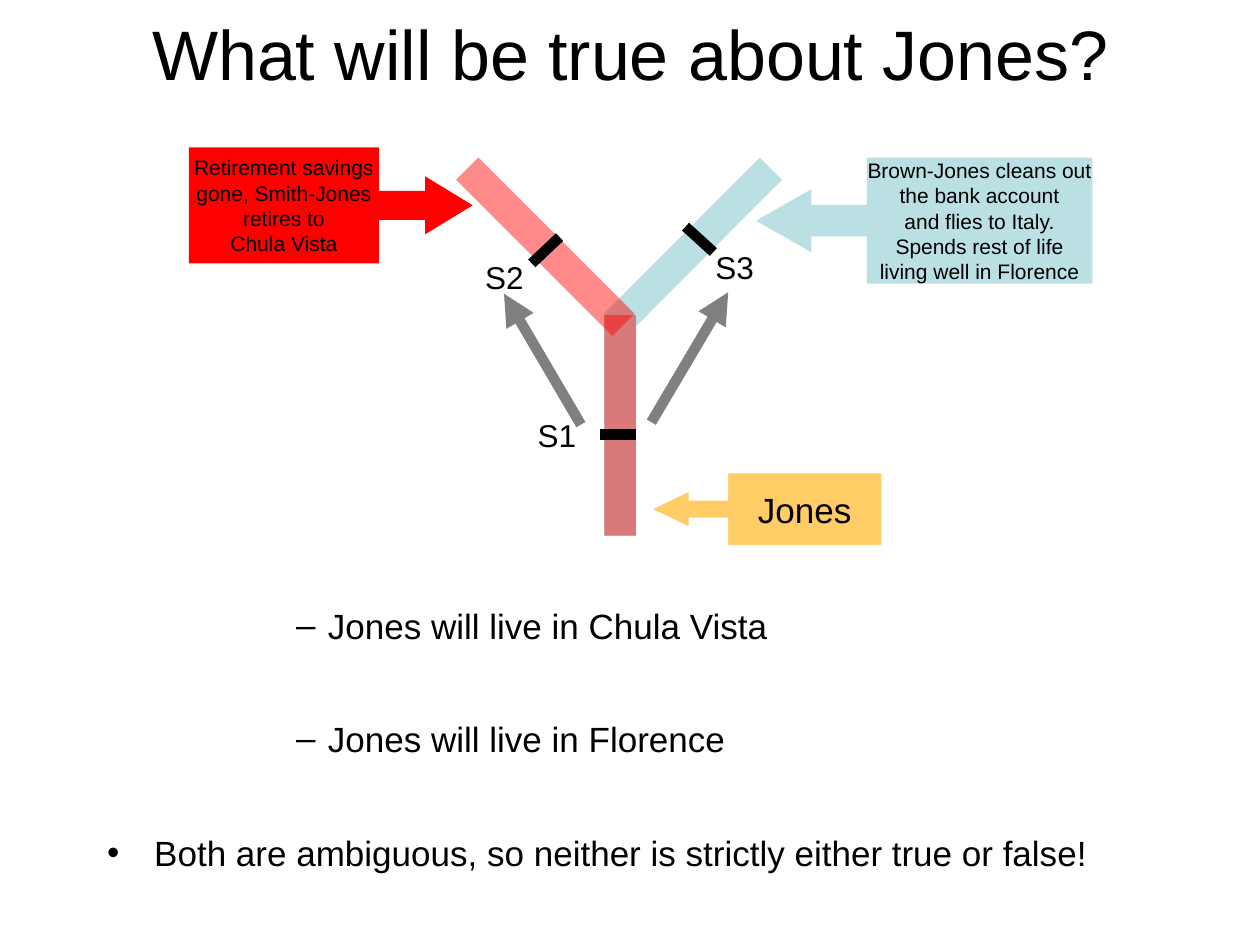
from typing import NamedTuple

from lxml.etree import SubElement
from pptx import Presentation
from pptx.dml.color import RGBColor
from pptx.enum.shapes import MSO_CONNECTOR, MSO_SHAPE
from pptx.enum.text import MSO_ANCHOR, MSO_AUTO_SIZE, PP_ALIGN
from pptx.oxml.ns import qn
from pptx.util import Cm, Pt

BLACK, RED, TEAL, GREY = "000000", "FF0000", "BBE0E3", "808080"


class Stroke(NamedTuple):
    start: tuple[float, float]
    end: tuple[float, float]
    color: str
    width: float = 6
    opacity: int = 100
    arrow: bool = False


class Label(NamedTuple):
    text: str
    left: float
    top: float


class Callout(NamedTuple):
    text: str
    box: tuple[float, float, float, float]
    preset: MSO_SHAPE
    adjustments: tuple[float, ...]
    fill: str
    size: int
    outline: str = ""


class Claim(NamedTuple):
    text: str
    bullet: str
    level: int
    margin: float
    hanging: float


FORK_STEM = (12.5, 10.8), (12.5, 6.35)
STROKES = [
    # Branches: Brown-Jones below, Smith-Jones translucent on top
    Stroke(*FORK_STEM, TEAL, 18),
    Stroke((12.4, 6.55), (15.54, 3.4), TEAL, 18),
    Stroke(*FORK_STEM, RED, 18, 46),
    Stroke((12.57, 6.55), (9.42, 3.4), RED, 18, 46),
    # Stage marks
    Stroke((10.72, 5.31), (11.28, 4.78), BLACK),
    Stroke((12.09, 8.76), (12.83, 8.76), BLACK),
    Stroke((14.38, 5.08), (13.82, 4.57), BLACK),
    # Arrows from S1 to S3 and S2
    Stroke((13.13, 8.51), (14.68, 5.89), GREY, arrow=True),
    Stroke((11.71, 8.56), (10.16, 5.92), GREY, arrow=True),
]
LABELS = [Label("S1", 10.59, 8.26), Label("S3", 14.17, 4.88), Label("S2", 9.53, 5.08)]
CALLOUTS = [
    Callout("Jones", (13.13, 9.53, 4.65, 1.47), MSO_SHAPE.LEFT_ARROW_CALLOUT,
            (0.25, 0.25, 0.52, 0.67), "FFCC66", 20, "FFFFFF"),
    Callout("Brown-Jones cleans out\vthe bank account\vand flies to Italy.\n"
            "Spends rest of life\nliving well in Florence",
            (15.24, 3.18, 6.78, 2.54), MSO_SHAPE.LEFT_ARROW_CALLOUT,
            (0.25, 0.25, 0.44, 0.67), TEAL, 12),
    Callout("Retirement savings\vgone, Smith-Jones\vretires to\vChula Vista",
            (3.81, 2.97, 5.72, 2.34), MSO_SHAPE.RIGHT_ARROW_CALLOUT,
            (0.25, 0.25, 0.41, 0.67), RED, 12),
]
CLAIMS = [
    Claim("Jones will live in Chula Vista", "–", 3, 4.45, 0.64),
    Claim("Jones will live in Florence", "–", 3, 4.45, 0.64),
    Claim("Both are ambiguous, so neither is strictly either true or false!",
          "•", 0, 0.95, 0.95),
]


def rgb(color: str) -> RGBColor:
    return RGBColor.from_string(color)


def format_text(frame, size: int, align=PP_ALIGN.LEFT) -> None:
    for paragraph in frame.paragraphs:
        paragraph.alignment = align
        for run in paragraph.runs:
            run.font.name = "Arial"
            run.font.size = Pt(size)
            run.font.color.rgb = rgb(BLACK)


def draw_stroke(shapes, stroke: Stroke) -> None:
    connector = shapes.add_connector(
        MSO_CONNECTOR.STRAIGHT, *map(Cm, stroke.start + stroke.end))
    connector.line.width = Pt(stroke.width)
    connector.line.color.rgb = rgb(stroke.color)
    properties = connector.element.spPr
    if stroke.opacity < 100:
        color = properties.find(".//" + qn("a:srgbClr"))
        SubElement(color, qn("a:alpha"), val=str(stroke.opacity * 1000))
    if stroke.arrow:
        SubElement(properties.find(qn("a:ln")), qn("a:tailEnd"), type="triangle")
    SubElement(properties, qn("a:effectLst"))


def draw_label(shapes, label: Label) -> None:
    frame = shapes.add_textbox(
        Cm(label.left), Cm(label.top), Cm(1.42), Cm(1.02)).text_frame
    frame.word_wrap = True
    frame.text = label.text
    format_text(frame, 18)


def draw_callout(shapes, callout: Callout) -> None:
    shape = shapes.add_shape(callout.preset, *map(Cm, callout.box))
    shape.shadow.inherit = False
    for index, value in enumerate(callout.adjustments):
        shape.adjustments[index] = value
    shape.fill.solid()
    shape.fill.fore_color.rgb = rgb(callout.fill)
    if callout.outline:
        shape.line.color.rgb = rgb(callout.outline)
        shape.line.width = Pt(0.75)
    else:
        shape.line.fill.background()
    frame = shape.text_frame
    frame.word_wrap = False
    frame.vertical_anchor = MSO_ANCHOR.MIDDLE
    frame.text = callout.text
    format_text(frame, callout.size, PP_ALIGN.CENTER)


def draw_claims(shapes, claims: list[Claim]) -> None:
    frame = shapes.add_textbox(Cm(1.91), Cm(12.07), Cm(21.59), Cm(6.35)).text_frame
    frame.word_wrap = True
    frame.text = "\n".join(claim.text for claim in claims)
    format_text(frame, 20)
    for paragraph, claim in zip(frame.paragraphs, claims):
        paragraph.level = claim.level
        paragraph.space_before = Pt(4.6)
        paragraph.space_after = Pt(36)
        properties = paragraph._p.get_or_add_pPr()
        properties.set("marL", str(Cm(claim.margin)))
        properties.set("indent", str(-Cm(claim.hanging)))
        SubElement(properties, qn("a:buFont"), typeface="Arial")
        SubElement(properties, qn("a:buChar"), char=claim.bullet)


def main() -> None:
    presentation = Presentation()
    presentation.slide_width, presentation.slide_height = Cm(25.4), Cm(19.05)
    slide = presentation.slides.add_slide(presentation.slide_layouts[5])
    shapes = slide.shapes

    # Title
    title = shapes.title
    title.left, title.top, title.width, title.height = map(Cm, (1.91, 0, 21.59, 2.11))
    title.text_frame.text = "What will be true about Jones?"
    title.text_frame.auto_size = MSO_AUTO_SIZE.NONE
    title.text_frame.vertical_anchor = MSO_ANCHOR.MIDDLE
    format_text(title.text_frame, 40, PP_ALIGN.CENTER)

    # Claims below the diagram
    draw_claims(shapes, CLAIMS)

    # Forking diagram
    for stroke in STROKES:
        draw_stroke(shapes, stroke)
    for label in LABELS:
        draw_label(shapes, label)
    for callout in CALLOUTS:
        draw_callout(shapes, callout)

    presentation.save("out.pptx")


if __name__ == "__main__":
    main()
